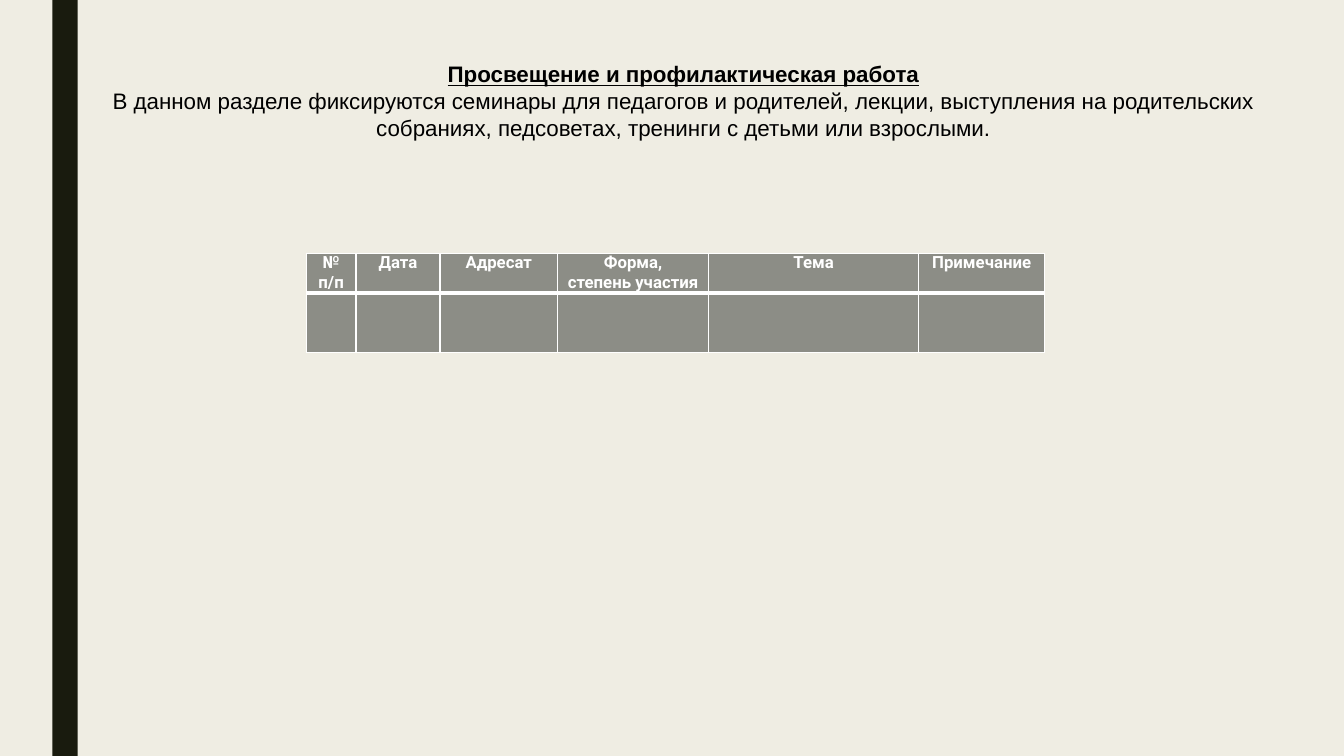
from lxml.etree import SubElement
from pptx import Presentation
from pptx.dml.color import RGBColor
from pptx.enum.shapes import MSO_SHAPE as Shape
from pptx.enum.text import MSO_ANCHOR as Anchor, PP_ALIGN as Align
from pptx.oxml.ns import qn
from pptx.util import Cm, Pt

INK, WHITE, GREY, DARK, PAPER = "000000", "FFFFFF", "8C8D86", "191B0E", "EFEDE3"
HEADING = {"name": "Arial", "size": Pt(16), "bold": True, "underline": True}
BODY = {"name": "Arial", "size": Pt(16), "bold": False, "underline": False}
HEADER = {"name": "Roboto", "size": Pt(12), "bold": True}


def paint(target, color):
    target.solid()
    target.fore_color.rgb = RGBColor.from_string(color)


def assign(target, values):
    for key, value in values.items():
        setattr(target, key, value)


class SlideBuilder:
    """Draws styled elements on the current slide."""

    def __init__(self, deck, background):
        self.slide = deck.slides.add_slide(deck.slide_layouts[6])
        paint(self.slide.background.fill, background)

    def bar(self, place, color):
        bar = self.slide.shapes.add_shape(Shape.RECTANGLE, *map(Cm, place))
        bar.shadow.inherit = False
        paint(bar.fill, color)
        bar.line.fill.background()

    def fill_text(self, frame, lines, color):
        for index, (text, style) in enumerate(lines):
            paragraph = frame.add_paragraph() if index else frame.paragraphs[0]
            paragraph.alignment = Align.CENTER
            run = paragraph.add_run()
            run.text = text
            assign(run.font, style)
            paint(run.font.fill, color)

    def text(self, place, lines, layout):
        frame = self.slide.shapes.add_textbox(*map(Cm, place)).text_frame
        assign(frame, layout)
        self.fill_text(frame, lines, INK)

    def borders(self, cell, widths):
        properties = cell._tc.get_or_add_tcPr()
        for side, width in widths.items():
            line = SubElement(properties, qn(f"a:ln{side}"), w=str(int(Pt(width))))
            fill = SubElement(line, qn("a:solidFill"))
            SubElement(fill, qn("a:srgbClr"), val=WHITE)

    def table(self, left, top, widths, heights, headers):
        size = map(Cm, (left, top, sum(widths), sum(heights)))
        table = self.slide.shapes.add_table(len(heights), len(widths), *size).table
        table.horz_banding = False
        for column, width in zip(table.columns, widths):
            column.width = Cm(width)
        for row, height in zip(table.rows, heights):
            row.height = Cm(height)
        for header, blank, lines in zip(*(row.cells for row in table.rows), headers):
            self.borders(header, {"L": 1, "R": 1, "T": 1, "B": 3})
            self.borders(blank, {"L": 1, "R": 1, "T": 3, "B": 1})
            paint(header.fill, GREY)
            paint(blank.fill, GREY)
            assign(header, {"margin_left": Cm(0.18), "margin_right": Cm(0.18),
                            "margin_top": 0, "margin_bottom": 0})
            self.fill_text(header.text_frame, [(line, HEADER) for line in lines], WHITE)
            blank.text_frame.paragraphs[0].font.size = Pt(12)


def main():
    deck = Presentation()
    assign(deck, {"slide_width": Cm(33.87), "slide_height": Cm(19.05)})
    page = SlideBuilder(deck, PAPER)
    page.bar((1.32, 0, 0.64, 19.05), DARK)
    page.table(
        7.72, 6.38, (1.25, 2.12, 2.96, 3.81, 5.29, 3.18), (1, 1.5),
        [["№ п/п"], ["Дата"], ["Адресат"], ["Форма,", "степень участия"],
         ["Тема"], ["Примечание"]])
    page.text(
        (2.44, 1.37, 29.57, 3.07),
        [("Просвещение и профилактическая работа", HEADING),
         ("В данном разделе фиксируются семинары для педагогов и родителей, "
          "лекции, выступления на родительских собраниях, педсоветах, "
          "тренинги с детьми или взрослыми.", BODY)],
        {"word_wrap": True, "vertical_anchor": Anchor.MIDDLE, "margin_bottom": Cm(0.86)})
    deck.save("out.pptx")


if __name__ == "__main__":
    main()
